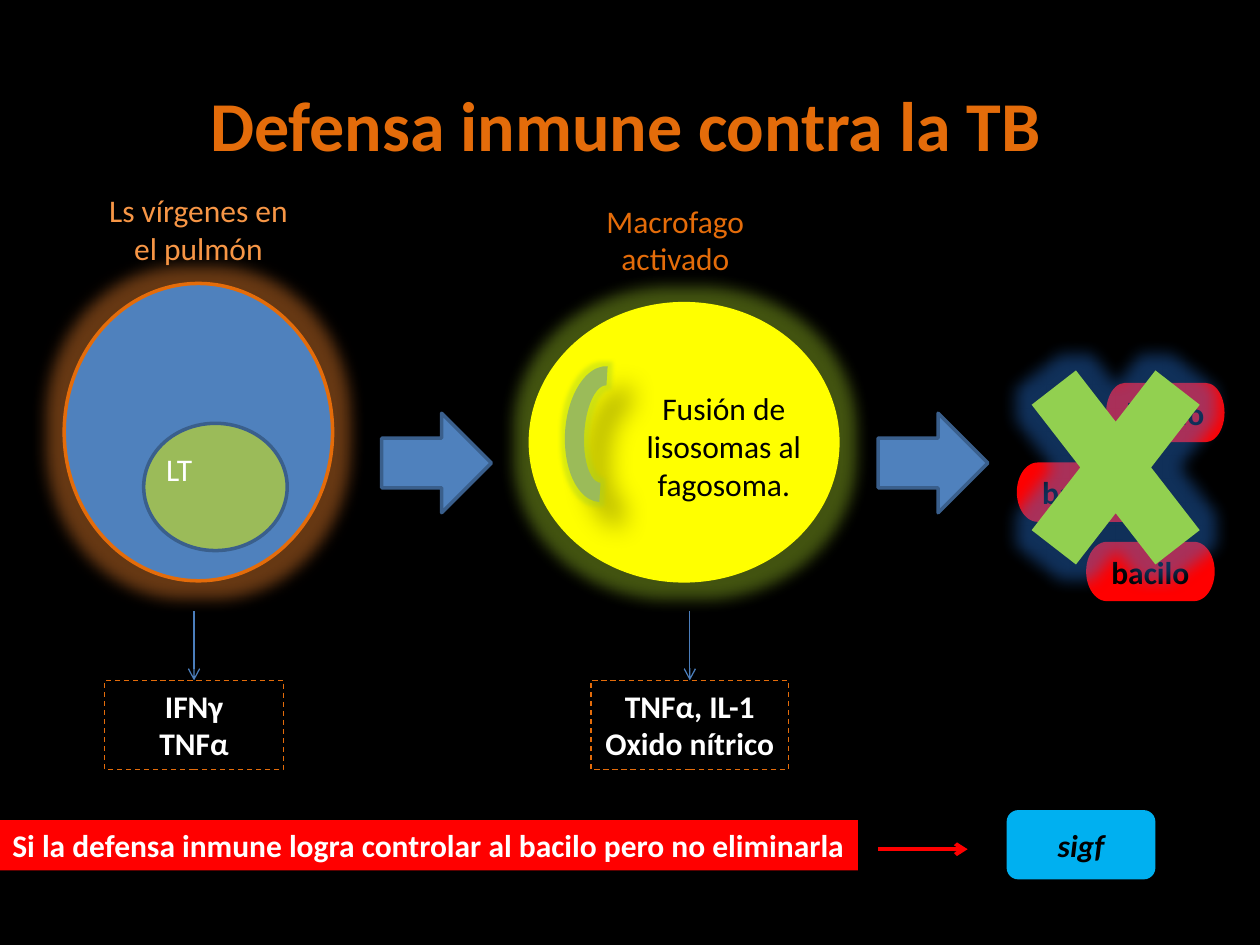
from lxml.etree import SubElement
from pptx import Presentation
from pptx.dml.color import RGBColor
from pptx.enum.dml import MSO_LINE
from pptx.enum.shapes import MSO_CONNECTOR, MSO_SHAPE
from pptx.enum.text import MSO_ANCHOR, PP_ALIGN
from pptx.oxml.ns import qn
from pptx.util import Inches, Pt

WIDTH, HEIGHT = Inches(10), Inches(7.5)
ORANGE, GREEN, BLUE, NAVY = "E46C0A", "9BBB59", "4F81BD", "3A5F8C"
RED, YELLOW, WHITE, BLACK = "FF0000", "FFFF00", "FFFFFF", "000000"
SOFT_SHADOW = (30, 15, 18, 45)


def rgb(code):
    return RGBColor.from_string(code)


def sub(box, x, y, w, h):
    """Part of a box, with x, y, w and h as percentages of it."""
    left, top, width, height = box
    return (int(left + width * x / 100), int(top + height * y / 100),
            int(width * w / 100), int(height * h / 100))


def add_effect(sp, tag, color, alpha, **attrs):
    effects = sp._element.spPr.find(qn("a:effectLst"))
    effect = SubElement(effects, qn(tag), {k: str(v) for k, v in attrs.items()})
    clr = SubElement(effect, qn("a:srgbClr"), val=color)
    SubElement(clr, qn("a:alpha"), val=str(alpha * 1000))


def shape(s, kind, box, fill=None, line=None, line_w=2, glow=None, shadow=None):
    """glow is (colour, radius); shadow is (alpha, blur, distance, angle)."""
    sp = s.shapes.add_shape(kind, *box)
    if fill:
        sp.fill.solid()
        sp.fill.fore_color.rgb = rgb(fill)
    else:
        sp.fill.background()
    if line:
        sp.line.color.rgb = rgb(line)
        sp.line.width = Pt(line_w)
    else:
        sp.line.fill.background()
    sp.shadow.inherit = False
    if glow:
        color, radius = glow
        add_effect(sp, "a:glow", color, 40, rad=Pt(radius))
    if shadow:
        alpha, blur, dist, angle = shadow
        add_effect(sp, "a:outerShdw", BLACK, alpha, blurRad=Pt(blur),
                   dist=Pt(dist), dir=angle * 60000, rotWithShape=0)
    return sp


def write(sp, lines, color, size=18, bold=False, italic=False,
          align=PP_ALIGN.CENTER, anchor=MSO_ANCHOR.TOP, wrap=True):
    tf = sp.text_frame
    tf.word_wrap = wrap
    tf.vertical_anchor = anchor
    tf.text = lines
    for p in tf.paragraphs:
        p.alignment = align
        p.font.name = "Calibri"
        p.font.size = Pt(size)
        p.font.bold = bold
        p.font.italic = italic
        p.font.color.rgb = rgb(color)


def label(s, box, text, color, **style):
    write(s.shapes.add_textbox(*box), text, color, **style)


def arrow(s, start, end, color, width):
    c = s.shapes.add_connector(MSO_CONNECTOR.STRAIGHT, *start, *end)
    c.line.color.rgb = rgb(color)
    c.line.width = Pt(width)
    SubElement(c.line._get_or_add_ln(), qn("a:tailEnd"), type="arrow")
    SubElement(c._element.spPr, qn("a:effectLst"))
    return c


def cell_column(s, box, caption, cell, products):
    """Caption, cell and the framed products its arrow leads to."""
    caption_box, text, color = caption
    label(s, sub(box, *caption_box), text, color)
    cell_box, fill, line, glow = cell
    shape(s, MSO_SHAPE.OVAL, sub(box, *cell_box), fill, line, glow=(glow, 18))
    x, width, names = products
    frame = shape(s, MSO_SHAPE.RECTANGLE, sub(box, x, 84.7, width, 15.3),
                  line=ORANGE, line_w=0.75)
    frame.line.dash_style = MSO_LINE.DASH
    write(frame, names, WHITE, bold=True)
    middle = frame.left + frame.width // 2
    start_y = sub(box, 0, 72.84, 0, 0)[1]
    arrow(s, (middle, start_y), (middle, frame.top), "4B7EBC", 0.75).end_connect(frame, 0)


def lymphocyte(s, box):
    cell_column(s, box,
                ((7.5, 0, 85, 15.3), "Ls vírgenes en el pulmón", "F79646"),
                ((0, 16.81, 100, 50.86), BLUE, ORANGE, "FF8C30"),
                (15, 66.7, "IFNγ\nTNFα"))
    shape(s, MSO_SHAPE.OVAL, sub(box, 29.6, 40.73, 53.5, 21.77), GREEN, NAVY)
    label(s, sub(box, 33.3, 44.18, 61.5, 8.6), "LT", WHITE, align=PP_ALIGN.LEFT)


def macrophage(s, box):
    cell_column(s, box,
                ((19.7, 1.72, 54.9, 15.3), "Macrofago activado", ORANGE),
                ((0, 20.26, 100, 47.41), YELLOW, YELLOW, "A5D028"),
                (19.7, 64.3, "TNFα, IL-1\nOxido nítrico"))
    arc = shape(s, MSO_SHAPE.BLOCK_ARC, sub(box, 1.64, 36, 44.26, 13.15), GREEN,
                glow=("A5D028", 5), shadow=SOFT_SHADOW)
    arc.rotation = 273.5
    arc._element.spPr.xfrm.set("flipH", "1")
    label(s, sub(box, 29.1, 33.84, 67.6, 21.77),
          "Fusión de lisosomas al fagosoma.", BLACK)


def killed_bacilli(s, box):
    for x, y, width, shadow in ((8.5, 48.4, 54, None),
                                (46, 22.5, 49.7, (32, 3.5, 2.2, 90)),
                                (37.6, 74.2, 54, None)):
        sp = shape(s, MSO_SHAPE.FLOWCHART_TERMINATOR, sub(box, x, y, width, 19.3),
                   RED, shadow=shadow)
        write(sp, "bacilo", BLACK, bold=True, anchor=MSO_ANCHOR.MIDDLE, wrap=False)
    shape(s, MSO_SHAPE.MATH_MULTIPLY, box, "92D050", glow=("2878E0", 18))


def conclusion(s, box):
    banner = shape(s, MSO_SHAPE.RECTANGLE, sub(box, 0, 14.5, 74.26, 72.7), RED)
    write(banner, "Si la defensa inmune logra controlar al bacilo pero no eliminarla",
          WHITE, bold=True, align=PP_ALIGN.LEFT, wrap=False)
    arrow(s, sub(box, 76, 56.4, 0, 0)[:2], sub(box, 83.75, 56.4, 0, 0)[:2], RED, 2.25)
    shape(s, MSO_SHAPE.FLOWCHART_ALTERNATE_PROCESS, sub(box, 87.13, 0, 12.87, 100),
          "00B0F0", shadow=SOFT_SHADOW)
    label(s, sub(box, 88, 14.5, 11.12, 72.7), "sigf", BLACK, bold=True, italic=True)


def main():
    prs = Presentation()
    prs.slide_width, prs.slide_height = WIDTH, HEIGHT
    s = prs.slides.add_slide(prs.slide_layouts[6])
    s.background.fill.solid()
    s.background.fill.fore_color.rgb = rgb(BLACK)
    page = (0, 0, WIDTH, HEIGHT)

    label(s, sub(page, 8.3, 8, 82.7, 10.3), "Defensa inmune contra la TB",
          ORANGE, size=40, bold=True)
    lymphocyte(s, sub(page, 5.1, 19.6, 21.3, 61.87))
    macrophage(s, sub(page, 42.1, 19.6, 24.4, 61.87))
    for x in (30.3, 69.7):
        shape(s, MSO_SHAPE.RIGHT_ARROW, sub(page, x, 43.73, 8.7, 10.53), BLUE, NAVY)
    killed_bacilli(s, sub(page, 79.1, 33.2, 18.9, 32.53))
    conclusion(s, sub(page, 0, 85.73, 91.7, 7.33))
    prs.save("out.pptx")


if __name__ == "__main__":
    main()
